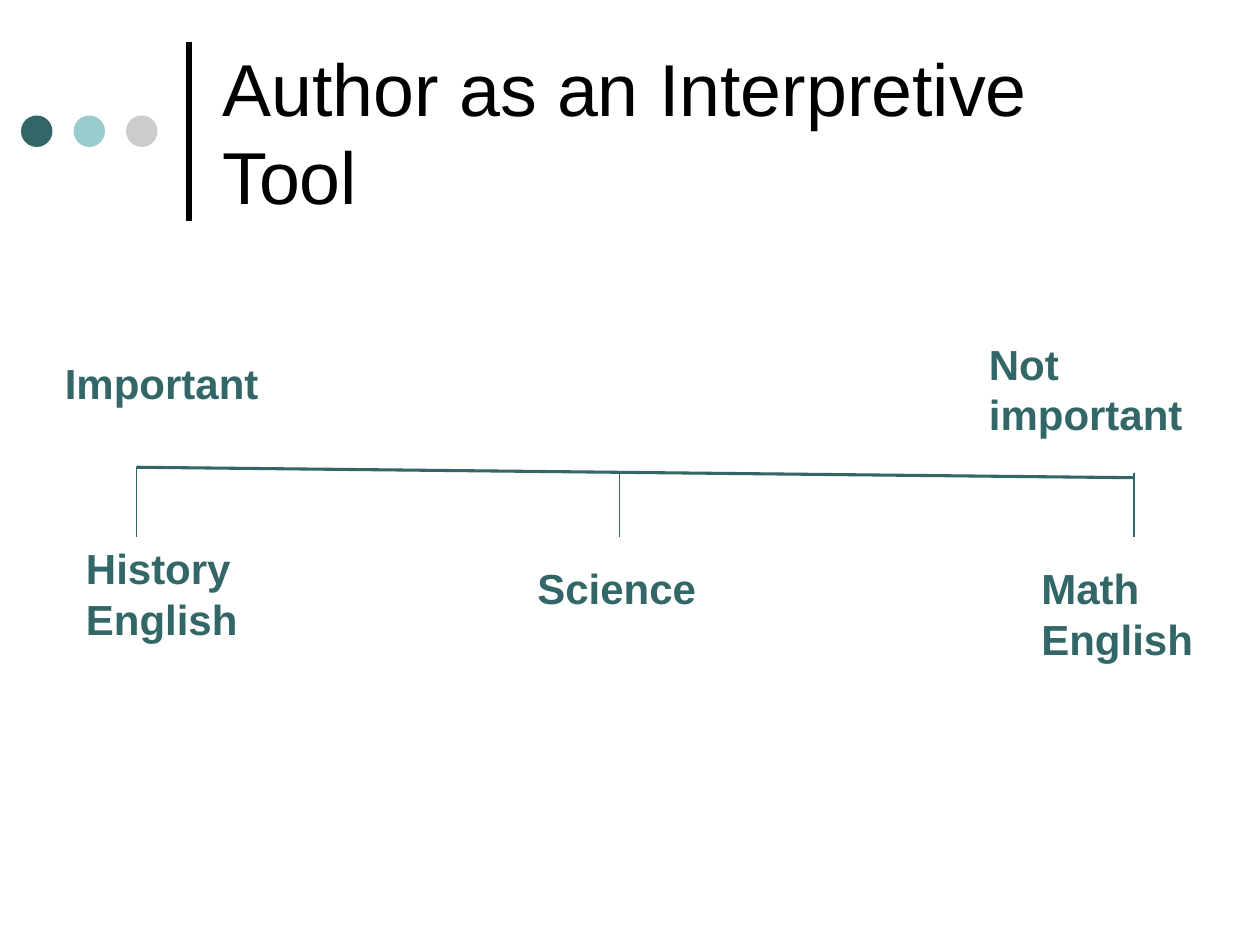
"""Builds a slide that ranks school subjects by the importance of the author."""
from dataclasses import dataclass

from lxml.etree import SubElement
from pptx import Presentation
from pptx.dml.color import RGBColor
from pptx.enum.shapes import MSO_CONNECTOR as Connector, MSO_SHAPE as Shape
from pptx.enum.text import MSO_ANCHOR as Anchor, MSO_AUTO_SIZE as AutoSize
from pptx.oxml.ns import qn
from pptx.util import Inches, Pt

BLACK = RGBColor(0x00, 0x00, 0x00)
TEAL = RGBColor(0x33, 0x66, 0x66)
AQUA = RGBColor(0x99, 0xCC, 0xCC)
GRAY = RGBColor(0xCC, 0xCC, 0xCC)
WHITE = RGBColor(0xFF, 0xFF, 0xFF)
FONT = "Arial"
CELL = Inches(1) / 12


@dataclass
class Box:
    """A region measured in grid columns and rows."""
    left: float
    top: float
    width: float
    height: float

    def inner(self, column, row, width, height):
        """Return the box at an offset inside this one."""
        return Box(self.left + column, self.top + row, width, height)

    def lengths(self):
        """Return left, top, width and height as slide lengths."""
        return [round(CELL * n) for n in (self.left, self.top, self.width, self.height)]


def add_line(slide, box, start, end, color, weight):
    """Draw a straight line between two grid points of the box."""
    points = [round(CELL * n) for column, row in (start, end)
              for n in (box.left + column, box.top + row)]
    line = slide.shapes.add_connector(Connector.STRAIGHT, *points)
    line.line.color.rgb = color
    line.line.width = Pt(weight)
    SubElement(line._element.spPr, qn("a:effectLst"))


def add_text(slide, box, lines, size, color, bold=False, anchor=Anchor.TOP,
             auto_size=AutoSize.SHAPE_TO_FIT_TEXT):
    """Place one paragraph per line in a wrapping text box."""
    frame = slide.shapes.add_textbox(*box.lengths()).text_frame
    frame.word_wrap = True
    frame.auto_size = auto_size
    frame.vertical_anchor = anchor
    frame.text = "\n".join(lines)
    for paragraph in frame.paragraphs:
        font = paragraph.font
        font.name, font.size, font.bold = FONT, Pt(size), bold
        font.color.rgb = color


def add_header(slide, box, title):
    """Place the three dots, the vertical rule and the title."""
    add_line(slide, box, (16, 18.5), (16, 1.5), BLACK, 3)
    for index, color in enumerate((TEAL, AQUA, GRAY)):
        dot = slide.shapes.add_shape(
            Shape.OVAL, *box.inner(index * 5, 8.5, 3, 3).lengths())
        dot.shadow.inherit = False
        dot.fill.solid()
        dot.fill.fore_color.rgb = color
        dot.line.fill.background()
    add_text(slide, box.inner(18, 0, box.width - 18, box.height), [title], 42,
             BLACK, anchor=Anchor.MIDDLE, auto_size=AutoSize.NONE)


def add_scale(slide, box):
    """Place the importance axis, its ticks and its labels."""
    add_line(slide, box, (8, 12.9), (103, 13.9), TEAL, 1.75)
    for column, row in ((103, 13.4), (54, 13.4), (8, 12.9)):
        add_line(slide, box, (column, row), (column, 19.5), TEAL, 0.75)
    labels = (
        (["Important"], 0, 1.9, 30, 6),
        (["Not important"], 88, 0, 22, 10.9),
        (["History", "English"], 2, 19.5, 22, 10.9),
        (["Math", "English"], 93, 21.4, 17, 10.9),
        (["Science"], 45, 21.4, 19, 6),
    )
    for lines, *place in labels:
        add_text(slide, box.inner(*place), lines, 24, TEAL, bold=True)


def main():
    """Build and save the presentation."""
    presentation = Presentation()
    presentation.slide_width = Inches(10)
    presentation.slide_height = Inches(7.5)
    slide = presentation.slides.add_slide(presentation.slide_layouts[6])
    slide.background.fill.solid()
    slide.background.fill.fore_color.rgb = WHITE
    add_header(slide, Box(2, 2.5, 110, 20), "Author as an Interpretive Tool")
    add_scale(slide, Box(5, 31.6, 110, 32.3))
    presentation.save("out.pptx")


if __name__ == "__main__":
    main()
